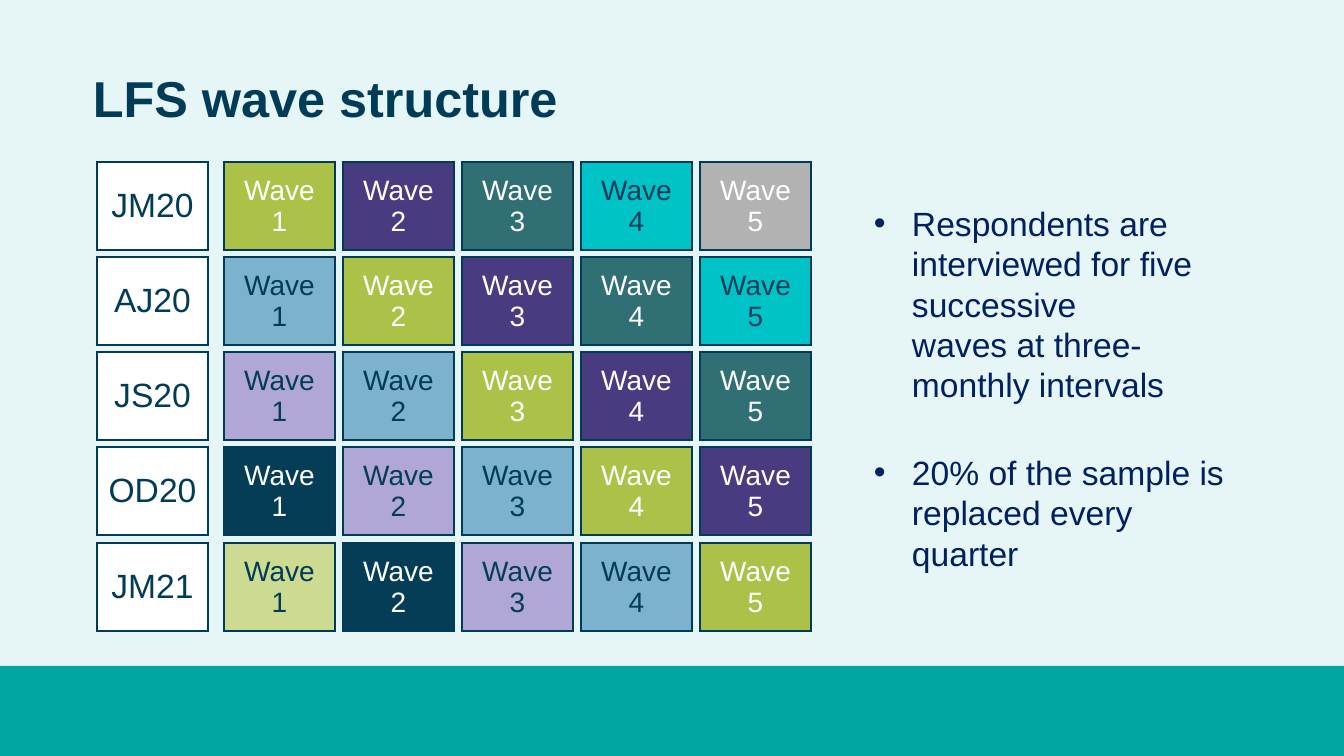
"""Build the LFS wave structure slide."""
from lxml import etree
from pptx import Presentation
from pptx import util as u
from pptx.dml.color import RGBColor
from pptx.enum import shapes, text
from pptx.oxml import ns

TITLE = "LFS wave structure"
QUARTERS = ["JM20", "AJ20", "JS20", "OD20", "JM21"]
BULLETS = [
    "Respondents are interviewed for five successive \vwaves at three-monthly intervals",
    "20% of the sample is replaced every quarter",
]
COLORS = {
    "background": "E6F6F6", "band": "00A5A1", "title": "003C57",
    "ink": "003B57", "body": "002060", "white": "FFFFFF",
    "grey": "B3B2B3", "cyan": "00C3C7", "teal": "306F74",
    "purple": "483B7F", "green": "ABC148", "blue": "7DB2CE",
    "lilac": "B0A7D6", "navy": "053D57", "pale": "CDDA91",
}
COHORTS = [
    ("grey", "white"), ("cyan", "ink"), ("teal", "white"),
    ("purple", "white"), ("green", "white"), ("blue", "ink"),
    ("lilac", "navy"), ("navy", "white"), ("pale", "ink"),
]
WAVES = 5
SLIDE_W, SLIDE_H = 1344, 756
BAND_TOP = 666
QUARTER_X, WAVE_X, WAVE_STEP = 97, 224, 119
GRID_TOP, GRID_SPAN = 162, 381
CELL_W, CELL_H = 111, 88


def px(n):
    return u.Emu(round(n * 914400 / 100.8))


def rgb(name):
    return RGBColor.from_string(COLORS[name])


def style(p, size, color, bold=False):
    for r in p.runs:
        r.font.name, r.font.size, r.font.bold = "Arial", u.Pt(size), bold
        r.font.color.rgb = rgb(color)


def add_border(cell):
    tc_pr = cell._tc.get_or_add_tcPr()
    for side in ("lnL", "lnR", "lnT", "lnB"):
        ln = etree.SubElement(tc_pr, ns.qn("a:" + side), w=str(u.Pt(2.25)))
        fill = etree.SubElement(ln, ns.qn("a:solidFill"))
        etree.SubElement(fill, ns.qn("a:srgbClr"), val=COLORS["ink"])


def add_box(s, x, y, label, size, fill, ink):
    table = s.shapes.add_table(1, 1, px(x), px(y), px(CELL_W), px(CELL_H)).table
    table.first_row = table.horz_banding = False
    cell = table.cell(0, 0)
    add_border(cell)
    cell.fill.solid()
    cell.fill.fore_color.rgb = rgb(fill)
    cell.vertical_anchor = text.MSO_ANCHOR.MIDDLE
    cell.text_frame.text = label
    p = cell.text_frame.paragraphs[0]
    p.alignment = text.PP_ALIGN.CENTER
    style(p, size, ink)


def add_title(s):
    title = s.shapes.title
    title.left, title.top, title.width, title.height = px(93), px(71), px(1159), px(58)
    tf = title.text_frame
    tf.margin_left = tf.margin_top = tf.margin_right = tf.margin_bottom = 0
    tf.vertical_anchor = text.MSO_ANCHOR.MIDDLE
    tf.text = TITLE
    p = tf.paragraphs[0]
    p.alignment = text.PP_ALIGN.LEFT
    p.line_spacing = 0.95
    style(p, 36, "title", True)


def add_bullets(s):
    tf = s.shapes.add_textbox(px(874), px(193), px(380), px(385)).text_frame
    tf.word_wrap = True
    tf.margin_left = 0
    tf.vertical_anchor = text.MSO_ANCHOR.BOTTOM
    for i, line in enumerate(BULLETS):
        p = tf.add_paragraph() if i else tf.paragraphs[0]
        p.text = line
        p.space_after = u.Pt(6 if i == len(BULLETS) - 1 else 34)
        p_pr = p._p.get_or_add_pPr()
        p_pr.set("marL", str(px(38)))
        p_pr.set("indent", str(-px(38)))
        etree.SubElement(p_pr, ns.qn("a:buFont"), typeface="Arial")
        etree.SubElement(p_pr, ns.qn("a:buChar"), char="•")
        style(p, 24, "body")


def main():
    prs = Presentation()
    prs.slide_width, prs.slide_height = px(SLIDE_W), px(SLIDE_H)
    s = prs.slides.add_slide(prs.slide_layouts[5])
    s.background.fill.solid()
    s.background.fill.fore_color.rgb = rgb("background")

    band = s.shapes.add_shape(shapes.MSO_SHAPE.RECTANGLE, 0, px(BAND_TOP),
                              px(SLIDE_W), px(SLIDE_H - BAND_TOP))
    band.shadow.inherit = False
    band.fill.solid()
    band.fill.fore_color.rgb = rgb("band")
    band.line.fill.background()

    add_title(s)
    for row, quarter in enumerate(QUARTERS):
        y = GRID_TOP + GRID_SPAN * row // (len(QUARTERS) - 1)
        add_box(s, QUARTER_X, y, quarter, 24, "white", "ink")
        for wave in range(WAVES):
            fill, ink = COHORTS[row - wave + WAVES - 1]
            add_box(s, WAVE_X + WAVE_STEP * wave, y, f"Wave {wave + 1}", 20, fill, ink)
    add_bullets(s)
    prs.save("out.pptx")


if __name__ == "__main__":
    main()
